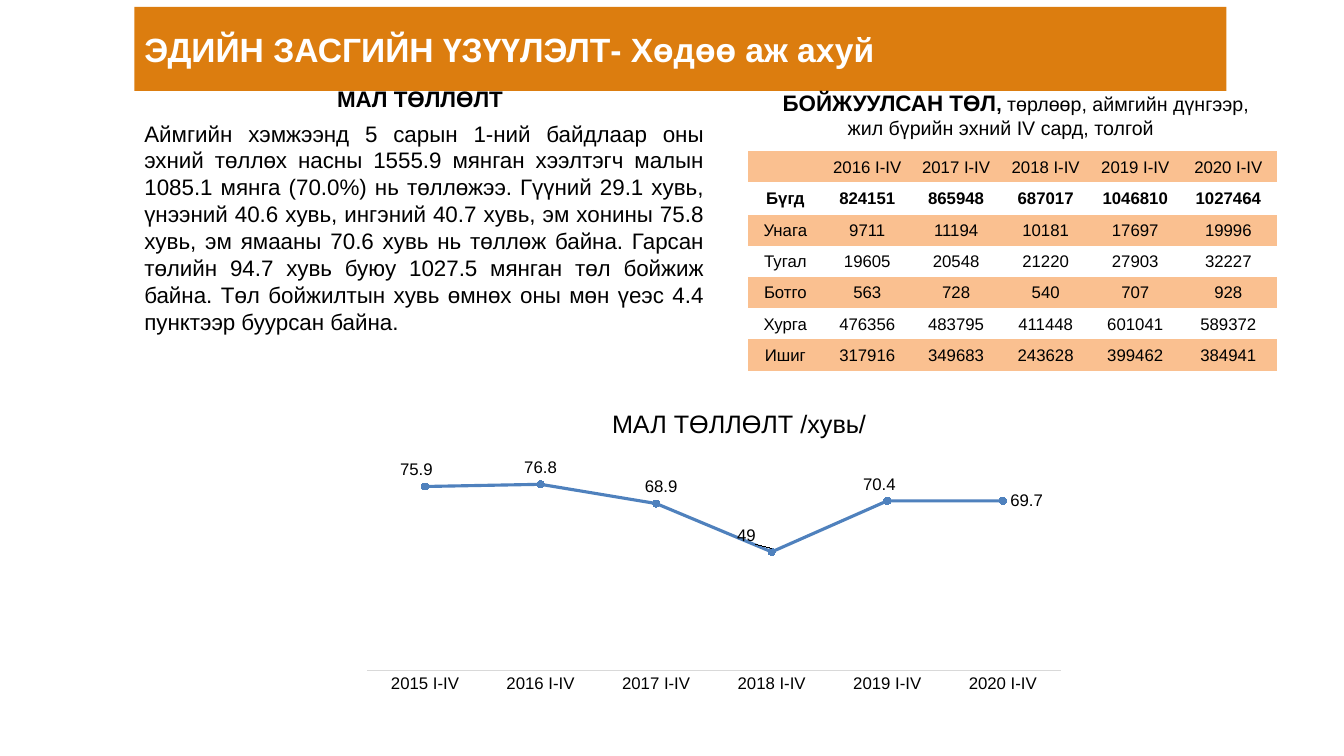
from lxml import etree
from pptx import Presentation
from pptx.chart import data as cd
from pptx.dml.color import RGBColor
from pptx.enum import chart as ch, text as tx
from pptx.oxml import ns
from pptx.util import Pt

COLORS = {"banner": "DC7D0F", "band": "FAC090", "line": "4F81BD",
          "axis": "D9D9D9", "text": "000000", "light": "FFFFFF"}
FONT = "Arial"
NO_GRID_STYLE = "{2D5ABB26-0587-4C30-8999-92F81FD0307C}"

SUMMARY = (
    "Аймгийн хэмжээнд 5 сарын 1-ний байдлаар оны эхний төллөх насны 1555.9 мянган "
    "хээлтэгч малын 1085.1 мянга (70.0%) нь төллөжээ. Гүүний 29.1 хувь, үнээний 40.6 хувь, "
    "ингэний 40.7 хувь, эм хонины 75.8 хувь, эм ямааны 70.6 хувь нь төллөж байна. Гарсан "
    "төлийн 94.7 хувь буюу 1027.5 мянган төл бойжиж байна. Төл бойжилтын хувь өмнөх оны "
    "мөн үеэс 4.4 пунктээр буурсан байна.")
YEARS = [f"{year} I-IV" for year in range(2015, 2021)]
YOUNG_STOCK = [
    ["", *YEARS[1:]],
    ["Бүгд", "824151", "865948", "687017", "1046810", "1027464"],
    ["Унага", "9711", "11194", "10181", "17697", "19996"],
    ["Тугал", "19605", "20548", "21220", "27903", "32227"],
    ["Ботго", "563", "728", "540", "707", "928"],
    ["Хурга", "476356", "483795", "411448", "601041", "589372"],
    ["Ишиг", "317916", "349683", "243628", "399462", "384941"],
]
BIRTH_RATES = [75.9, 76.8, 68.9, 49, 70, 70]
LABEL_TEXTS = {4: "70.4", 5: "69.7"}
LABEL_SHIFTS = {0: -0.012, 2: 0.007, 3: -0.035, 4: -0.011}


def rgb(name):
    return RGBColor.from_string(COLORS[name])


def style_font(font, size, color="text", bold=False):
    font.name, font.size, font.bold = FONT, Pt(size), bold
    font.color.rgb = rgb(color)


def set_indent(paragraph, left=0, first=0):
    props = paragraph._p.get_or_add_pPr()
    props.set("marL", str(Pt(left)))
    props.set("indent", str(Pt(first)))


def add_text(slide, box, content, size, align=tx.PP_ALIGN.LEFT, wrap=True):
    frame = slide.shapes.add_textbox(*map(Pt, box)).text_frame
    frame.word_wrap = wrap
    frame.auto_size = tx.MSO_AUTO_SIZE.SHAPE_TO_FIT_TEXT
    frame.text = content
    for paragraph in frame.paragraphs:
        paragraph.alignment = align
        style_font(paragraph.font, size)
    return frame


def add_grid(slide, left, top, widths, heights, rows):
    """Unstyled table with centred text."""
    table = slide.shapes.add_table(len(rows), len(widths), Pt(left), Pt(top),
                                   Pt(sum(widths)), Pt(sum(heights))).table
    table.first_row = table.horz_banding = False
    table._tbl.tblPr.find(ns.qn("a:tableStyleId")).text = NO_GRID_STYLE
    for column, width in zip(table.columns, widths):
        column.width = Pt(width)
    for row, height, values in zip(table.rows, heights, rows):
        row.height = Pt(height)
        for cell, value in zip(row.cells, values):
            cell.margin_left = cell.margin_right = cell.margin_top = Pt(0.75)
            cell.margin_bottom = 0
            cell.vertical_anchor = tx.MSO_ANCHOR.MIDDLE
            cell.fill.background()
            cell.text = value
            paragraph = cell.text_frame.paragraphs[0]
            paragraph.alignment = tx.PP_ALIGN.CENTER
            style_font(paragraph.font, 12)
    return table


def manual_layout(**values):
    layout = etree.Element(ns.qn("c:layout"))
    manual = etree.SubElement(layout, ns.qn("c:manualLayout"))
    for tag, value in values.items():
        etree.SubElement(manual, ns.qn(f"c:{tag}")).set("val", str(value))
    return layout


def add_banner(slide, wording):
    banner = slide.shapes.title
    banner.left, banner.top, banner.width, banner.height = map(Pt, (96, 5, 780, 60))
    banner.fill.solid()
    banner.fill.fore_color.rgb = rgb("banner")
    frame = banner.text_frame
    frame.text = wording
    frame.auto_size = tx.MSO_AUTO_SIZE.NONE
    frame.vertical_anchor = tx.MSO_ANCHOR.MIDDLE
    heading = frame.paragraphs[0]
    heading.alignment = tx.PP_ALIGN.JUSTIFY
    set_indent(heading, 40.5, -40.5)
    style_font(heading.font, 24, "light", True)


def add_stock_heading(slide):
    frame = add_text(slide, (552, 60, 354, 44), "\nжил бүрийн эхний IV сард, толгой", 14)
    first, second = frame.paragraphs
    for wording, size, bold in (("БОЙЖУУЛСАН ТӨЛ", 16, True), (", ", 14, True),
                                ("төрлөөр, аймгийн дүнгээр,", 14, False)):
        run = first.add_run()
        run.text = wording
        style_font(run.font, size, bold=bold)
    set_indent(second, 46.5)


def add_rate_chart(slide):
    rates = cd.CategoryChartData(number_format="General")
    rates.categories = YEARS
    rates.add_series("Series 1", BIRTH_RATES)
    chart = slide.shapes.add_chart(ch.XL_CHART_TYPE.LINE_MARKERS, Pt(252), Pt(319.5),
                                   Pt(516), Pt(179.5), rates).chart
    chart.has_title = chart.has_legend = False
    style_font(chart.font, 10)
    chart.font.name = "Calibri"

    # Axes and plot area
    chart.value_axis.visible = False
    chart.value_axis.has_major_gridlines = False
    chart.value_axis.minimum_scale, chart.value_axis.maximum_scale = 0, 90
    years = chart.category_axis
    years.major_tick_mark = ch.XL_TICK_MARK.NONE
    years.format.line.color.rgb = rgb("axis")
    years.format.line.width = Pt(0.75)
    style_font(years.tick_labels.font, 12)
    area = chart._chartSpace.chart.plotArea
    for old in area.findall(ns.qn("c:layout")):
        area.remove(old)
    area.insert(0, manual_layout(layoutTarget="inner", xMode="edge", yMode="edge",
                                 x=0.02, y=0.02, w=0.96, h=0.87))

    # Line and markers
    plot = chart.plots[0]
    plot.vary_by_categories = False
    rate = plot.series[0]
    rate.smooth = False
    rate.format.line.color.rgb = rgb("line")
    rate.format.line.width = Pt(2.25)
    rate.marker.style, rate.marker.size = ch.XL_MARKER_STYLE.CIRCLE, 5
    rate.marker.format.fill.solid()
    rate.marker.format.fill.fore_color.rgb = rgb("line")
    rate.marker.format.line.color.rgb = rgb("line")

    # Labels
    rate.data_labels.show_value = True
    style_font(rate.data_labels.font, 12)
    for index in range(len(YEARS)):
        label = rate.points[index].data_label
        last = index == len(YEARS) - 1
        label.position = ch.XL_LABEL_POSITION.RIGHT if last else ch.XL_LABEL_POSITION.ABOVE
        if index in LABEL_TEXTS:
            label.text_frame.text = LABEL_TEXTS[index]
            style_font(label.text_frame.paragraphs[0].runs[0].font, 12)
        else:
            style_font(label.font, 12)
        if index in LABEL_SHIFTS:
            label._dLbl.insert(1, manual_layout(x=LABEL_SHIFTS[index], y=0))


def main():
    deck = Presentation()
    deck.slide_width, deck.slide_height = Pt(960), Pt(540)
    slide = deck.slides.add_slide(deck.slide_layouts[5])

    # Title and summary
    add_banner(slide, "ЭДИЙН ЗАСГИЙН ҮЗҮҮЛЭЛТ- Хөдөө аж ахуй")
    add_text(slide, (96, 82, 414, 163), SUMMARY, 16, tx.PP_ALIGN.JUSTIFY)
    births = add_grid(slide, 186, 60, [228], [20], [["МАЛ ТӨЛЛӨЛТ"]]).cell(0, 0)
    births.vertical_anchor = tx.MSO_ANCHOR.BOTTOM
    style_font(births.text_frame.paragraphs[0].font, 16, bold=True)

    # Young stock by kind
    add_stock_heading(slide)
    stock = add_grid(slide, 534, 108, [54, 63, 64, 64, 64, 69],
                     [22.3, 23] + [22.3] * 5, YOUNG_STOCK)
    for number, row in enumerate(stock.rows):
        for cell in row.cells:
            if number % 2 == 0:
                cell.fill.solid()
                cell.fill.fore_color.rgb = rgb("band")
            cell.text_frame.paragraphs[0].font.bold = number == 1

    # Birth rate
    caption = add_text(slide, (392.5, 277, 235, 40), "МАЛ ТӨЛЛӨЛТ /хувь/", 18,
                       tx.PP_ALIGN.CENTER, wrap=False).paragraphs[0]
    caption.line_spacing = 1.5
    set_indent(caption, first=36)
    add_rate_chart(slide)

    deck.save("out.pptx")


if __name__ == "__main__":
    main()
